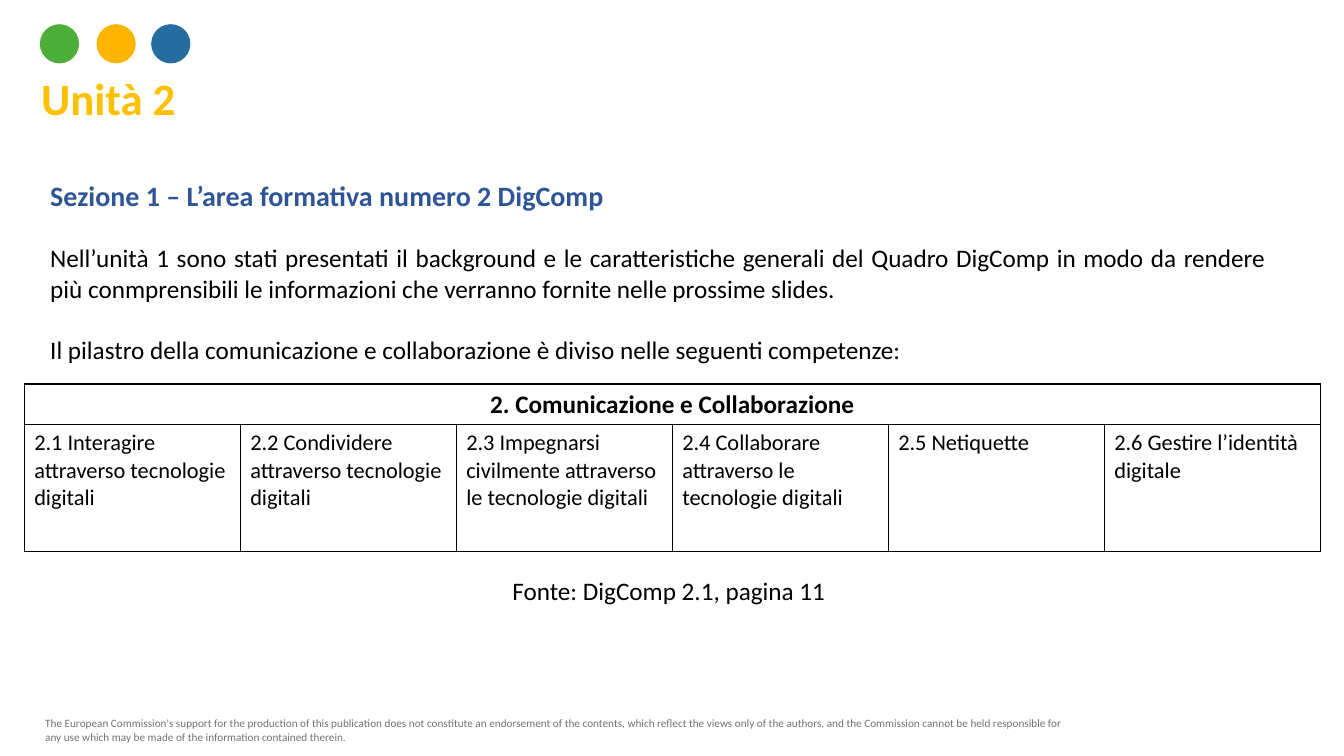
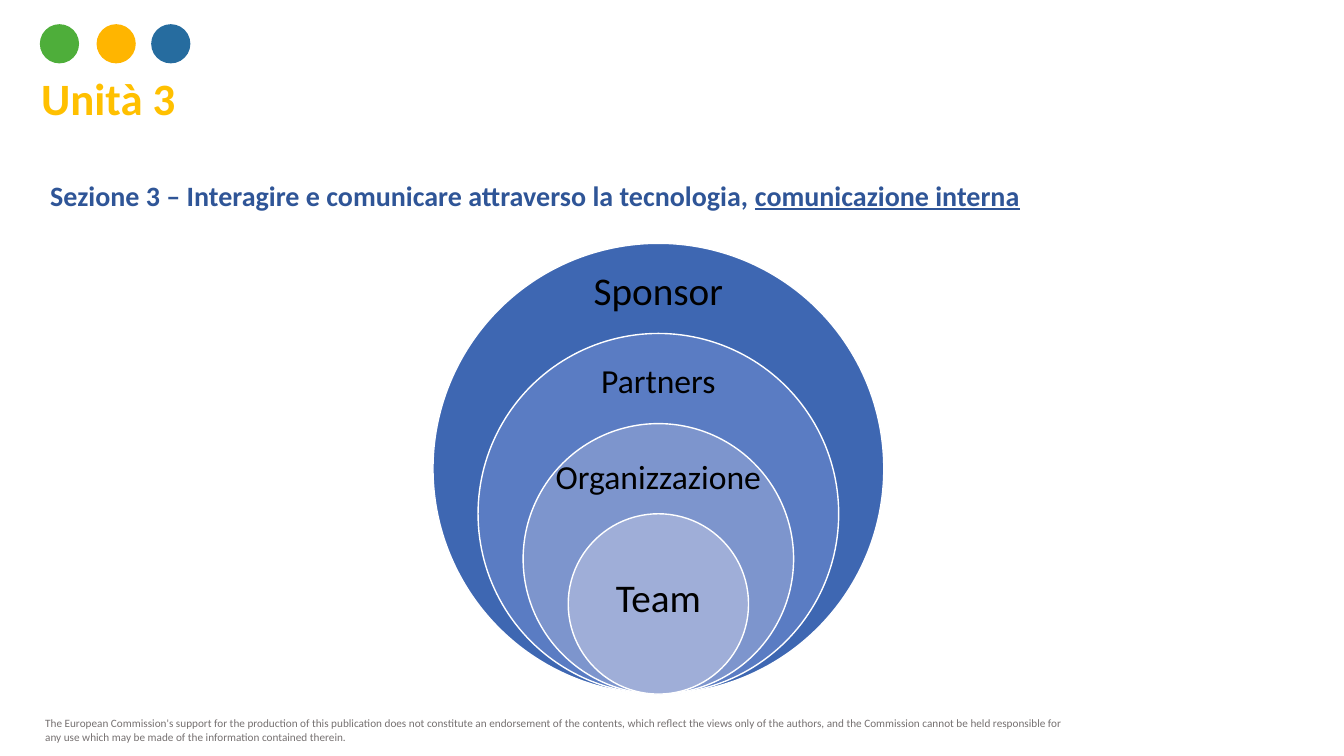
import pptx
import pptx.util
import pptx.dml.color
import pptx.enum.shapes
import pptx.enum.text
import pptx.oxml

Pt = pptx.util.Pt
RGB = pptx.dml.color.RGBColor.from_string
ALIGN = pptx.enum.text.PP_ALIGN
OVAL = pptx.enum.shapes.MSO_SHAPE.OVAL

COLORS = {
    "green": "4EAE3A", "amber": "FFB500", "blue": "266C9F",
    "title": "FFC000", "section": "2F5597", "footer": "767171",
    "black": "000000", "white": "FFFFFF",
    "ring1": "3E67B2", "ring2": "5A7CC3", "ring3": "7D95CD", "ring4": "9FAED8",
}
TITLE = {"size": Pt(32), "bold": True, "color": "title"}
SECTION = {"size": Pt(20), "bold": True, "color": "section"}
BODY = {"size": Pt(18), "color": "black"}
CELL = {"size": Pt(16), "color": "black"}
FOOTER = {"size": Pt(8), "color": "footer"}
DISCLAIMER = (
    "The European Commission's support for the production of this publication does not "
    "constitute an endorsement of the contents, which reflect the views only of the authors, "
    "and the Commission cannot be held responsible for any use which may be made of the "
    "information contained therein."
)


def write(tf, paragraphs, align=ALIGN.LEFT, gap=0):
    tf.word_wrap = True
    for i, runs in enumerate(paragraphs):
        p = tf.paragraphs[0] if i == 0 else tf.add_paragraph()
        p.alignment = align
        if i:
            p.space_before = Pt(gap)
        for text, style in runs:
            r = p.add_run()
            r.text = text
            for name, value in {"name": "Calibri", **style}.items():
                if name == "color":
                    r.font.color.rgb = RGB(COLORS[value])
                else:
                    setattr(r.font, name, value)


def add_circle(shapes, left, top, size, color, line=None):
    sp = shapes.add_shape(OVAL, Pt(left), Pt(top), Pt(size), Pt(size))
    sp.shadow.inherit = False
    sp.fill.solid()
    sp.fill.fore_color.rgb = RGB(COLORS[color])
    if line:
        sp.line.color.rgb = RGB(COLORS[line])
        sp.line.width = Pt(1)
    else:
        sp.line.fill.background()


prs = pptx.Presentation()
prs.slide_width, prs.slide_height = Pt(960), Pt(540)

units = [
    ("Unità 2", 140, [
        [("Sezione 1 – L’area formativa numero 2 DigComp", SECTION)],
        [("Nell’unità 1 sono stati presentati il background e le caratteristiche generali del "
          "Quadro DigComp in modo da rendere più conmprensibili le informazioni che verranno "
          "fornite nelle prossime slides.", BODY)],
        [("Il pilastro della comunicazione e collaborazione è diviso nelle seguenti "
          "competenze:", BODY)],
    ]),
    ("Unità 3", 32, [
        [("Sezione 3 – Interagire e comunicare attraverso la tecnologia, ", SECTION),
         ("comunicazione interna", {**SECTION, "underline": True})],
    ]),
]
slides = []
for title, height, paragraphs in units:
    s = prs.slides.add_slide(prs.slide_layouts[6])
    slides.append(s)
    for box, content, align, gap in [
        ((25.2, 508.3, 753, 26.6), [[(DISCLAIMER, FOOTER)]], ALIGN.LEFT, 0),
        ((22.3, 46.8, 121, 46), [[(title, TITLE)]], ALIGN.LEFT, 0),
        ((28.8, 123.8, 882.7, height), paragraphs, ALIGN.JUSTIFY, 22),
    ]:
        sp = s.shapes.add_textbox(*map(Pt, box))
        write(sp.text_frame, content, align, gap)
    dots = s.shapes.add_group_shape()
    for left, color in [(28.5, "green"), (69, "amber"), (108, "blue")]:
        add_circle(dots.shapes, left, 17.3, 28, color)

s = slides[0]
skills = [
    "2.1 Interagire attraverso tecnologie digitali",
    "2.2 Condividere attraverso tecnologie digitali",
    "2.3 Impegnarsi civilmente attraverso le tecnologie digitali",
    "2.4 Collaborare attraverso le tecnologie digitali",
    "2.5 Netiquette",
    "2.6 Gestire l’identità digitale",
]
frame = s.shapes.add_table(2, len(skills), Pt(17.3), Pt(274.3), Pt(925.8), Pt(119.5))
table = frame.table
table.first_row = table.horz_banding = False
for row, height in zip(table.rows, (28.8, 90.7)):
    row.height = Pt(height)
for column in table.columns:
    column.width = Pt(154.3)
table.cell(0, 0).merge(table.cell(0, len(skills) - 1))
write(table.cell(0, 0).text_frame,
      [[("2. Comunicazione e Collaborazione", {**BODY, "bold": True})]], ALIGN.CENTER)
for i, skill in enumerate(skills):
    write(table.cell(1, i).text_frame, [[(skill, CELL)]])
for cell in table.iter_cells():
    cell.fill.background()
    tcPr = cell._tc.get_or_add_tcPr()
    for i, side in enumerate("LRTB"):
        tcPr.insert(i, pptx.oxml.parse_xml(
            f'<a:ln{side} xmlns:a="http://schemas.openxmlformats.org/drawingml/2006/main" '
            f'w="{Pt(1)}"><a:solidFill><a:srgbClr val="{COLORS["black"]}"/></a:solidFill>'
            f'</a:ln{side}>'))
sp = s.shapes.add_textbox(Pt(281.5), Pt(407.5), Pt(392.4), Pt(28.8))
write(sp.text_frame, [[("Fonte: DigComp 2.1, pagina 11", BODY)]], ALIGN.CENTER)

s = slides[1]
center, bottom, diameter = 470.3, 495.8, 322
levels = [
    ("Sponsor", 186.5, 28, "ring1"),
    ("Partners", 253.4, 24, "ring2"),
    ("Organizzazione", 321.8, 24, "ring3"),
    ("Team", 406.1, 28, "ring4"),
]
rings = s.shapes.add_group_shape()
for i, (label, top, size, color) in enumerate(levels):
    d = diameter * (1 - 0.2 * i)
    add_circle(rings.shapes, center - d / 2, bottom - d, d, color, "white")
for label, top, size, color in levels:
    sp = s.shapes.add_textbox(Pt(center - 87.5), Pt(top), Pt(175), Pt(size * 1.5))
    write(sp.text_frame, [[(label, {**BODY, "size": Pt(size)})]], ALIGN.CENTER)

prs.save("out.pptx")
